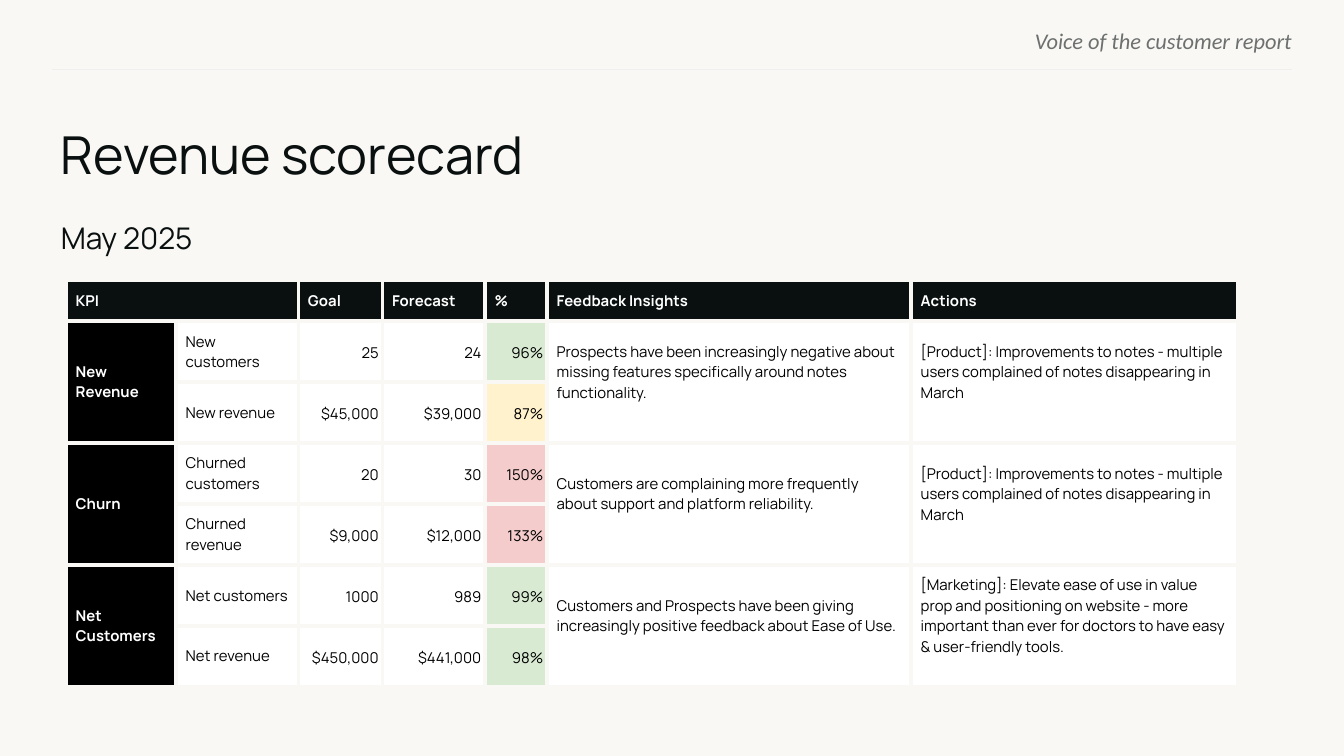
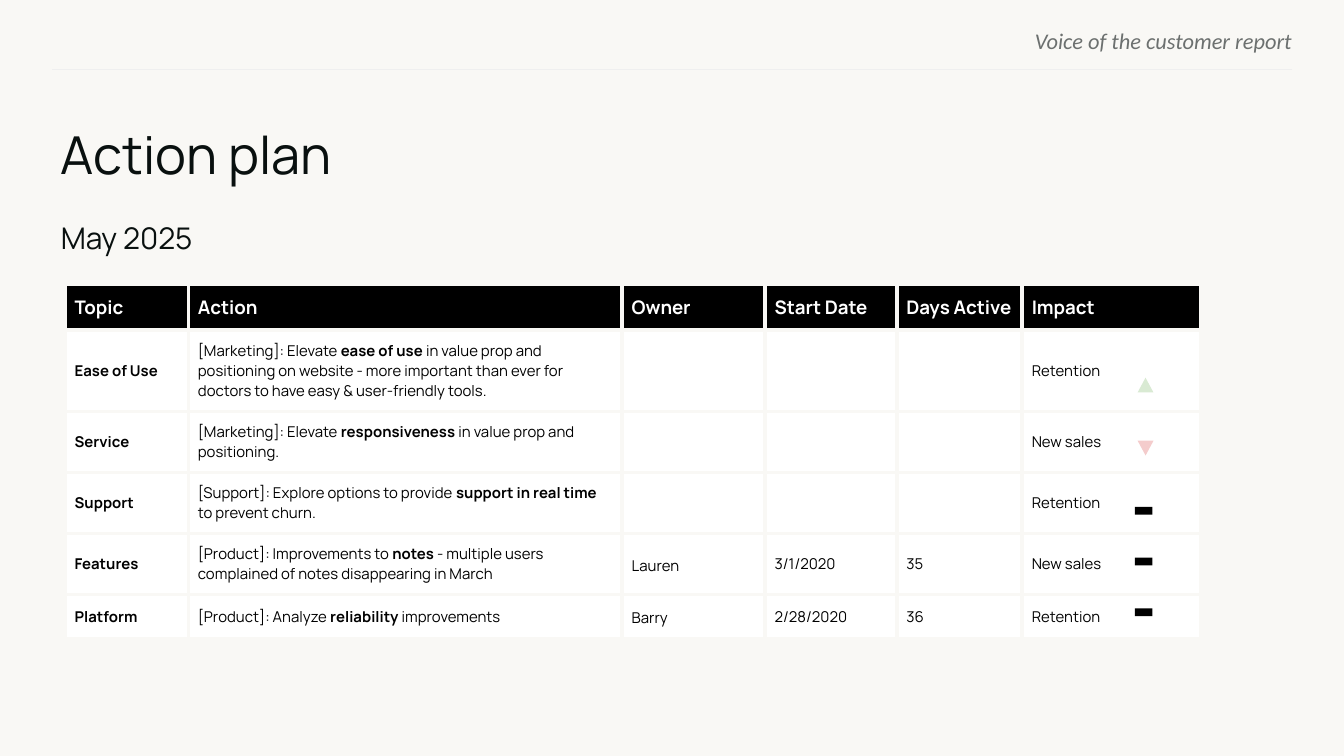
"""Build the revenue scorecard and action plan slides of a customer report."""
from dataclasses import dataclass, replace
from typing import NamedTuple

from lxml.etree import SubElement
from pptx import Presentation
from pptx.dml.color import RGBColor
from pptx.enum.shapes import MSO_CONNECTOR as Connector
from pptx.enum.shapes import MSO_SHAPE as Preset
from pptx.enum.text import MSO_ANCHOR as Anchor
from pptx.enum.text import MSO_AUTO_SIZE as AutoSize
from pptx.enum.text import PP_ALIGN as Align
from pptx.oxml import parse_xml
from pptx.oxml.ns import nsdecls, qn
from pptx.util import Cm, Pt


@dataclass(frozen=True)
class Theme:
    """Colours, fonts and type sizes of the deck."""
    paper: str = "F9F8F5"
    ink: str = "09100F"
    black: str = "000000"
    white: str = "FFFFFF"
    muted: str = "6C706F"
    rule: str = "EFEFEF"
    good: str = "D9EAD3"
    fair: str = "FFF2CC"
    poor: str = "F4CCCC"
    font: str = "Manrope"
    header_font: str = "Calibri"
    title_size: float = 28
    subtitle_size: float = 16
    header_size: float = 12
    heading_size: float = 10
    cell_size: float = 8
    rule_width: float = 0.75
    border_width: float = 2.25


THEME = Theme()


class Area(NamedTuple):
    """Left, top, width and height in centimetres."""
    left: float
    top: float
    width: float
    height: float

    def lengths(self) -> list:
        """Return the four measures as lengths."""
        return [Cm(value) for value in self]


@dataclass(frozen=True)
class TextStyle:
    """Look of a paragraph."""
    size: float
    color: str
    font: str = THEME.font
    bold: bool = False
    italic: bool = False
    align: Align = Align.LEFT
    spacing: float = 1.0
    after: float = 0


@dataclass(frozen=True)
class CellStyle:
    """Fill, text look and margins of a table cell."""
    fill: str
    text: TextStyle
    side: float = 0.18
    top: float = 0.19
    bottom: float = 0.19


class Kpi(NamedTuple):
    """One measured row of the scorecard."""
    label: str
    goal: str
    forecast: str
    percent: str
    status: str


class KpiGroup(NamedTuple):
    """KPI rows that share an insight and an action."""
    name: str
    insight: str
    action: str
    kpis: tuple[Kpi, ...]


class Marker(NamedTuple):
    """Impact symbol beside the action table."""
    preset: Preset
    area: Area
    color: str
    rotation: float = 0


TITLE = TextStyle(THEME.title_size, THEME.ink, after=10)
SUBTITLE = TextStyle(THEME.subtitle_size, THEME.ink, spacing=1.15)
HEADER = TextStyle(THEME.header_size, THEME.muted, THEME.header_font,
                   italic=True, align=Align.RIGHT)
PLAIN = TextStyle(THEME.cell_size, THEME.black)
STRONG = replace(PLAIN, bold=True)
LABEL = replace(STRONG, color=THEME.white)

KPI_HEAD = CellStyle(THEME.ink, LABEL)
GROUP = CellStyle(THEME.black, LABEL)
BODY = CellStyle(THEME.white, PLAIN)
REMARK = replace(BODY, bottom=0.57)
FIGURE = CellStyle(THEME.white, replace(PLAIN, align=Align.RIGHT, spacing=1.15),
                   side=0.07, top=0.05, bottom=0.05)
PLAN_HEAD = CellStyle(THEME.black, replace(LABEL, size=THEME.heading_size))
TOPIC = replace(BODY, text=STRONG)
OWNER = replace(BODY, text=replace(PLAIN, spacing=1.15))

NOTES_ACTION = ("[Product]: Improvements to notes - multiple users complained "
                "of notes disappearing in March")
KPI_HEADINGS = ("KPI", "", "Goal", "Forecast", "%", "Feedback Insights", "Actions")
KPI_COLUMNS = (2.08, 2.31, 1.59, 1.94, 1.17, 6.88, 6.18)
KPI_GROUPS = (
    KpiGroup("New Revenue",
             "Prospects have been increasingly negative about missing features "
             "specifically around notes functionality.",
             NOTES_ACTION,
             (Kpi("New customers", "25", "24", "96%", THEME.good),
              Kpi("New revenue", "$45,000", "$39,000", "87%", THEME.fair))),
    KpiGroup("Churn",
             "Customers are complaining more frequently about support and "
             "platform reliability.",
             NOTES_ACTION,
             (Kpi("Churned customers", "20", "30", "150%", THEME.poor),
              Kpi("Churned revenue", "$9,000", "$12,000", "133%", THEME.poor))),
    KpiGroup("Net Customers",
             "Customers and Prospects have been giving increasingly positive "
             "feedback about Ease of Use.",
             "[Marketing]: Elevate ease of use in value prop and positioning on "
             "website - more important than ever for doctors to have easy & "
             "user-friendly tools.",
             (Kpi("Net customers", "1000", "989", "99%", THEME.good),
              Kpi("Net revenue", "$450,000", "$441,000", "98%", THEME.good))),
)

PLAN_HEADINGS = ("Topic", "Action", "Owner", "Start Date", "Days Active", "Impact")
PLAN_COLUMNS = (2.33, 8.2, 2.7, 2.49, 2.37, 3.37)
PLAN_HEIGHTS = (0.87, 1.53, 1.15, 1.15, 1.15, 0.83)
PLAN_STYLES = (TOPIC, BODY, OWNER, BODY, BODY, BODY)
PLAN_ROWS = (
    ("Ease of Use",
     "[Marketing]: Elevate **ease of use **in value prop and positioning on "
     "website - more important than ever for doctors to have easy & "
     "user-friendly tools.", "", "", "", "Retention"),
    ("Service",
     "[Marketing]: Elevate **responsiveness** in value prop and positioning.",
     "", "", "", "New sales"),
    ("Support",
     "[Support]: Explore options to provide **support in real time** to "
     "prevent churn.", "", "", "", "Retention"),
    ("Features",
     "[Product]: Improvements to **notes** - multiple users complained of "
     "notes disappearing in March", "Lauren", "3/1/2020", "35", "New sales"),
    ("Platform", "[Product]: Analyze **reliability** improvements",
     "Barry", "2/28/2020", "36", "Retention"),
)
MARKERS = (
    Marker(Preset.ISOSCELES_TRIANGLE, Area(21.5, 7.14, 0.3, 0.28), THEME.good),
    Marker(Preset.ISOSCELES_TRIANGLE, Area(21.5, 8.33, 0.3, 0.28), THEME.poor, 180),
    *(Marker(Preset.RECTANGLE, Area(21.45, 9.58 + 0.96 * step, 0.33, 0.15), THEME.black)
      for step in range(3)),
)


def rgb(color: str) -> RGBColor:
    """Turn a hex string into a colour."""
    return RGBColor.from_string(color)


def write(frame, text: str, style: TextStyle) -> None:
    """Write one paragraph; parts between double asterisks are bold."""
    para = frame.paragraphs[0]
    para.alignment = style.align
    para.line_spacing = style.spacing
    para.space_before = Pt(0)
    para.space_after = Pt(style.after)
    for index, part in enumerate(text.split("**")):
        span = para.add_run()
        span.text = part
        span.font.name = style.font
        span.font.size = Pt(style.size)
        span.font.bold = style.bold or index % 2 == 1
        span.font.italic = style.italic
        span.font.color.rgb = rgb(style.color)


def fill_box(box, area: Area, text: str, style: TextStyle,
             anchor: Anchor = Anchor.TOP) -> None:
    """Place a text holder without margins and write into it."""
    box.left, box.top, box.width, box.height = area.lengths()
    frame = box.text_frame
    frame.word_wrap = True
    frame.auto_size = AutoSize.NONE
    frame.vertical_anchor = anchor
    frame.margin_left = frame.margin_right = Cm(0)
    frame.margin_top = frame.margin_bottom = Cm(0)
    write(frame, text, style)


def add_page(deck, title: str):
    """Add a page with header, rule, title and date."""
    page = deck.slides.add_slide(deck.slide_layouts[0])
    header = Area(14.64, 0.51, 9.78, 0.46)
    fill_box(page.shapes.add_textbox(*header.lengths()), header,
             "Voice of the customer report", HEADER)
    rule = page.shapes.add_connector(Connector.STRAIGHT, Cm(24.42), Cm(1.31),
                                     Cm(0.98), Cm(1.31))
    rule.line.color.rgb = rgb(THEME.rule)
    rule.line.width = Pt(THEME.rule_width)
    SubElement(rule._element.spPr, qn("a:effectLst"))
    fill_box(page.shapes.title, Area(1.15, 2.2, 23.44, 1.3), title, TITLE,
             Anchor.BOTTOM)
    fill_box(page.placeholders[1], Area(1.15, 4.06, 14.07, 0.64), "May 2025", SUBTITLE)
    return page


def set_cell(cell, text: str, style: CellStyle) -> None:
    """Fill and border a cell, and write its text if it has any."""
    cell.fill.solid()
    cell.fill.fore_color.rgb = rgb(style.fill)
    for index, side in enumerate("LRTB"):
        cell._tc.get_or_add_tcPr().insert(index, parse_xml(
            f'<a:ln{side} {nsdecls("a")} w="{Pt(THEME.border_width)}"><a:solidFill>'
            f'<a:srgbClr val="{THEME.paper}"/></a:solidFill></a:ln{side}>'))
    if text:
        cell.vertical_anchor = Anchor.MIDDLE
        cell.margin_left = cell.margin_right = Cm(style.side)
        cell.margin_top, cell.margin_bottom = Cm(style.top), Cm(style.bottom)
        write(cell.text_frame, text, style.text)


def add_grid(page, left: float, top: float, columns: tuple[float, ...],
             heights: tuple[float, ...], rows: list):
    """Draw a table from rows of text and style pairs."""
    area = Area(left, top, sum(columns), sum(heights))
    table = page.shapes.add_table(len(heights), len(columns), *area.lengths()).table
    table.first_row = table.horz_banding = False
    for column, width in zip(table.columns, columns):
        column.width = Cm(width)
    for row, height, contents in zip(table.rows, heights, rows):
        row.height = Cm(height)
        for cell, (text, style) in zip(row.cells, contents):
            set_cell(cell, text, style)
    return table


def build_scorecard(deck) -> None:
    """Build the revenue scorecard page."""
    page = add_page(deck, "Revenue scorecard")
    rows = [[(heading, KPI_HEAD) for heading in KPI_HEADINGS]]
    for group in KPI_GROUPS:
        for index, kpi in enumerate(group.kpis):
            name, insight, action = group[:3] if index == 0 else ("", "", "")
            rows.append([(name, GROUP), (kpi.label, BODY), (kpi.goal, FIGURE),
                         (kpi.forecast, FIGURE),
                         (kpi.percent, replace(FIGURE, fill=kpi.status)),
                         (insight, REMARK), (action, REMARK)])
    heights = (0.77,) + (1.15,) * (len(rows) - 1)
    table = add_grid(page, 1.25, 5.3, KPI_COLUMNS, heights, rows)
    table.cell(0, 0).merge(table.cell(0, 1))
    for top in range(1, len(rows), 2):
        for column in (0, 5, 6):
            table.cell(top, column).merge(table.cell(top + 1, column))


def build_plan(deck) -> None:
    """Build the action plan page."""
    page = add_page(deck, "Action plan")
    rows = [[(heading, PLAN_HEAD) for heading in PLAN_HEADINGS]]
    rows += [list(zip(row, PLAN_STYLES)) for row in PLAN_ROWS]
    add_grid(page, 1.23, 5.37, PLAN_COLUMNS, PLAN_HEIGHTS, rows)
    for marker in MARKERS:
        shape = page.shapes.add_shape(marker.preset, *marker.area.lengths())
        shape.rotation = marker.rotation
        shape.shadow.inherit = False
        shape.fill.solid()
        shape.fill.fore_color.rgb = rgb(marker.color)
        shape.line.fill.background()


def main() -> None:
    """Build and save the deck."""
    deck = Presentation()
    deck.slide_width, deck.slide_height = Cm(25.4), Cm(14.29)
    backdrop = deck.slide_master.background.fill
    backdrop.solid()
    backdrop.fore_color.rgb = rgb(THEME.paper)
    build_scorecard(deck)
    build_plan(deck)
    deck.save("out.pptx")


if __name__ == "__main__":
    main()
